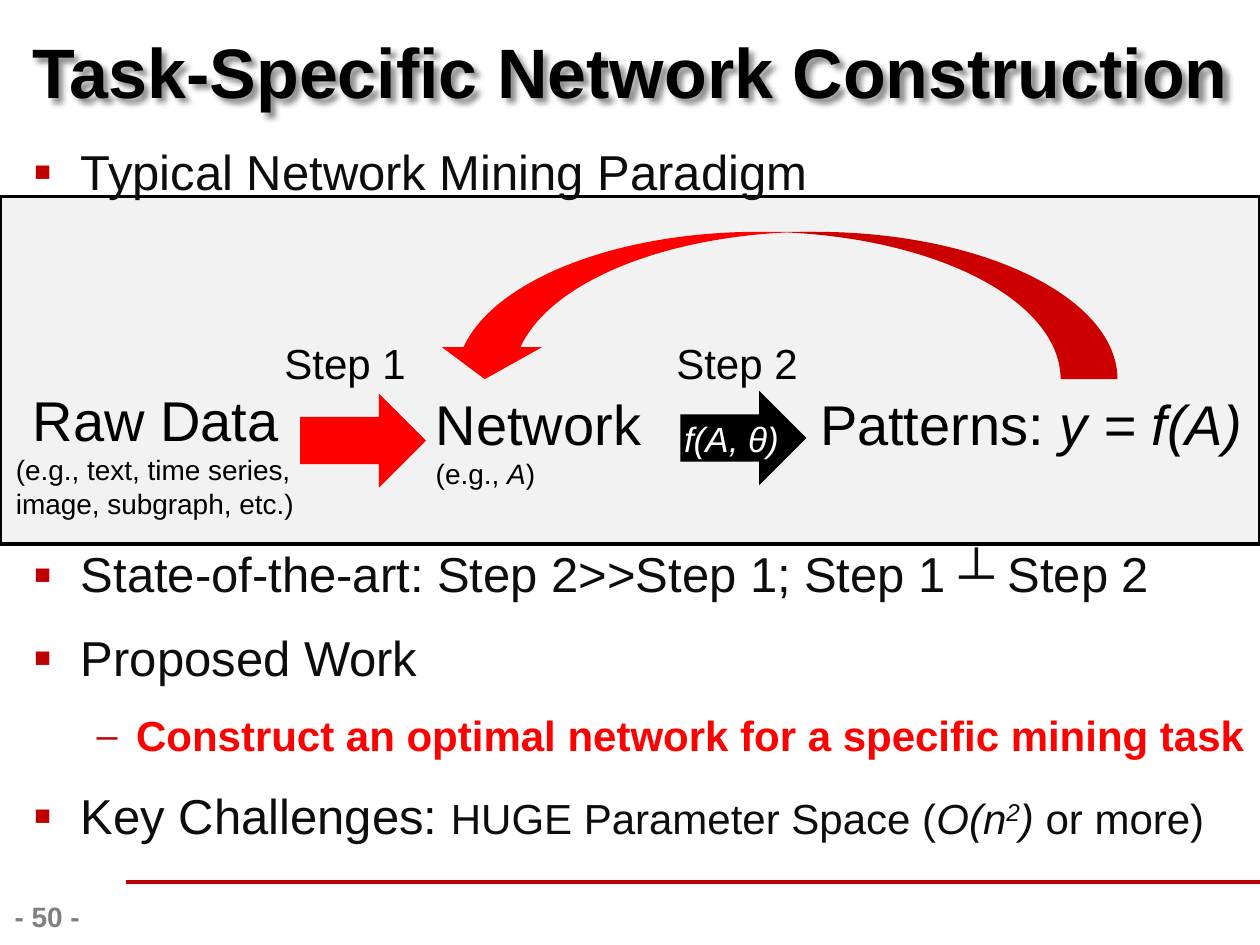
from lxml import etree
from pptx import Presentation
from pptx.dml.color import RGBColor
from pptx.enum.shapes import MSO_CONNECTOR, MSO_SHAPE
from pptx.enum.text import MSO_ANCHOR, PP_ALIGN
from pptx.oxml.ns import qn
from pptx.util import Pt

RECTANGLE, RIGHT_ARROW = MSO_SHAPE.RECTANGLE, MSO_SHAPE.RIGHT_ARROW
CURVED_ARROW = MSO_SHAPE.CURVED_DOWN_ARROW
STRAIGHT = MSO_CONNECTOR.STRAIGHT
LEFT, CENTER = PP_ALIGN.LEFT, PP_ALIGN.CENTER
TOP, MIDDLE = MSO_ANCHOR.TOP, MSO_ANCHOR.MIDDLE

FONT = "Arial"
COLORS = {"black": "000000", "body": "0D0D0D", "accent": "C00000", "red": "FF0000",
          "panel": "F2F2F2", "white": "FFFFFF", "muted": "808080"}
BULLETS = [("▪", 110, 27, -27), ("–", 90, 58.5, -22.5)]  # mark, size %, margin, indent


def rgb(name):
    return RGBColor.from_string(COLORS[name])


def write_run(paragraph, text, size=24, color="black", bold=False, italic=False, raised=False):
    run = paragraph.add_run()
    run.text = text
    font = run.font
    font.name, font.size, font.bold, font.italic = FONT, Pt(size), bold, italic
    font.color.rgb = rgb(color)
    if raised:
        run._r.get_or_add_rPr().set("baseline", "30000")


def write(frame, paragraphs, align=LEFT, anchor=TOP, wrap=False, insets=(7.2, 3.6), **style):
    """Fill a frame; each paragraph is a string or a list of (text, overrides)."""
    frame.word_wrap, frame.vertical_anchor = wrap, anchor
    frame.margin_left = frame.margin_right = Pt(insets[0])
    frame.margin_top = frame.margin_bottom = Pt(insets[1])
    for i, runs in enumerate(paragraphs):
        paragraph = frame.paragraphs[0] if i == 0 else frame.add_paragraph()
        paragraph.alignment = align
        for text, changes in [(runs, {})] if isinstance(runs, str) else runs:
            write_run(paragraph, text, **{**style, **changes})
    return frame


def add_text(slide, box, paragraphs, **style):
    text_box = slide.shapes.add_textbox(*map(Pt, box))
    write(text_box.text_frame, paragraphs, **style)
    return text_box


def add_block(slide, preset, box, fill, line=None):
    block = slide.shapes.add_shape(preset, *map(Pt, box))
    block.shadow.inherit = False
    block.fill.solid()
    block.fill.fore_color.rgb = rgb(fill)
    if line:
        block.line.color.rgb = rgb(line)
        block.line.width = Pt(2)
    else:
        block.line.fill.background()
    return block


def set_bullet(paragraph, level):
    mark, percent, margin, indent = BULLETS[level]
    properties = paragraph._p.get_or_add_pPr()
    properties.set("marL", str(Pt(margin)))
    properties.set("indent", str(Pt(indent)))
    color = etree.SubElement(properties, qn("a:buClr"))
    etree.SubElement(color, qn("a:srgbClr"), val=COLORS["accent"])
    etree.SubElement(properties, qn("a:buSzPct"), val=str(percent * 1000))
    etree.SubElement(properties, qn("a:buFont"), typeface=FONT)
    etree.SubElement(properties, qn("a:buChar"), char=mark)


def add_bullets(slide, box, items):
    """Items are (level, runs)."""
    frame = add_text(slide, box, [runs for _, runs in items], wrap=True,
                     size=28, color="body").text_frame
    for i, (paragraph, (level, _)) in enumerate(zip(frame.paragraphs, items)):
        set_bullet(paragraph, level)
        paragraph.line_spacing = 1.2
        if i:
            paragraph.space_before = Pt(7.5)


def add_title(slide, box):
    title = add_text(slide, box, ["Task-Specific Network Construction"], size=40, bold=True,
                     align=CENTER, anchor=MIDDLE, wrap=True, insets=(0, 0))
    effects = etree.SubElement(title._element.spPr, qn("a:effectLst"))
    shadow = etree.SubElement(effects, qn("a:outerShdw"), blurRad=str(Pt(3)),
                              dist=str(Pt(3)), dir="2700000")
    color = etree.SubElement(shadow, qn("a:srgbClr"), val=COLORS["black"])
    etree.SubElement(color, qn("a:alpha"), val="43000")


def add_paradigm(slide, box):
    left, top, width, height = box

    def place(x, y, w, h):
        return left + x, top + y, w, h

    add_block(slide, RECTANGLE, box, "panel", line="black")
    add_block(slide, RIGHT_ARROW, place(171.5, 112.5, 72, 54), "red")
    mining = add_block(slide, RIGHT_ARROW, place(388.8, 111, 72, 54), "black")
    write(mining.text_frame, ["f(A, θ)"], size=20, color="white", italic=True,
          align=CENTER, anchor=MIDDLE, insets=(0, 3.6))

    feedback = add_block(slide, CURVED_ARROW, place(248.4, 20.2, 390.2, 84.2), "red")
    for i, value in enumerate((0.386, 0.68, 0.217)):
        feedback.adjustments[i] = value
    feedback._element.spPr.find(qn("a:xfrm")).set("flipH", "1")

    for number, x in ((1, 155.5), (2, 379.4)):
        add_text(slide, place(x, 77, 84.2, 36), [f"Step {number}"])
    raw_data = add_text(slide, place(2, 104.4, 174.2, 85),
                        [[("Raw Data", {"size": 32})],
                         "(e.g., text, time series,", "image, subgraph, etc.)"], size=16)
    raw_data.text_frame.paragraphs[0].alignment = CENTER
    add_text(slide, place(241.9, 106.6, 190, 65.5),
             [[("Network", {"size": 32})],
              [("(e.g., ", {}), ("A", {"italic": True}), (")", {})]], size=16)
    add_text(slide, place(461.5, 106.6, 258.5, 46),
             [[("Patterns: ", {}), ("y = f(A)", {"italic": True})]], size=32)


def add_footer(slide, box):
    left, top, width, height = box
    rule = slide.shapes.add_connector(STRAIGHT, Pt(left + 72), Pt(top),
                                      Pt(left + width), Pt(top))
    rule.line.color.rgb = rgb("accent")
    rule.line.width = Pt(2)
    etree.SubElement(rule._element.spPr, qn("a:effectLst"))
    add_text(slide, (left, top + 6.5, 54, height - 6.5), ["- 50 -"], size=16,
             color="muted", bold=True, align=CENTER, wrap=True)


def main():
    deck = Presentation()
    deck.slide_width, deck.slide_height = Pt(720), Pt(540)
    slide = deck.slides.add_slide(deck.slide_layouts[6])
    add_paradigm(slide, (0, 112.3, 720, 198.7))
    add_title(slide, (0, 8.6, 720, 63.4))
    add_bullets(slide, (12.2, 70.6, 707.8, 46), [(0, "Typical Network Mining Paradigm")])
    add_bullets(slide, (12.2, 300.6, 707.8, 172), [
        (0, "State-of-the-art: Step 2>>Step 1; Step 1 ┴ Step 2"),
        (0, "Proposed Work"),
        (1, [("Construct an optimal network for a specific mining task",
              {"size": 24, "color": "red", "bold": True})]),
        (0, [("Key Challenges: ", {}),
             ("HUGE Parameter Space (", {"size": 24}),
             ("O(n", {"size": 24, "italic": True}),
             ("2", {"size": 24, "italic": True, "raised": True}),
             (")", {"size": 24, "italic": True}),
             (" or more)", {"size": 24})]),
    ])
    add_footer(slide, (0, 504, 720, 36))
    deck.save("out.pptx")


if __name__ == "__main__":
    main()
